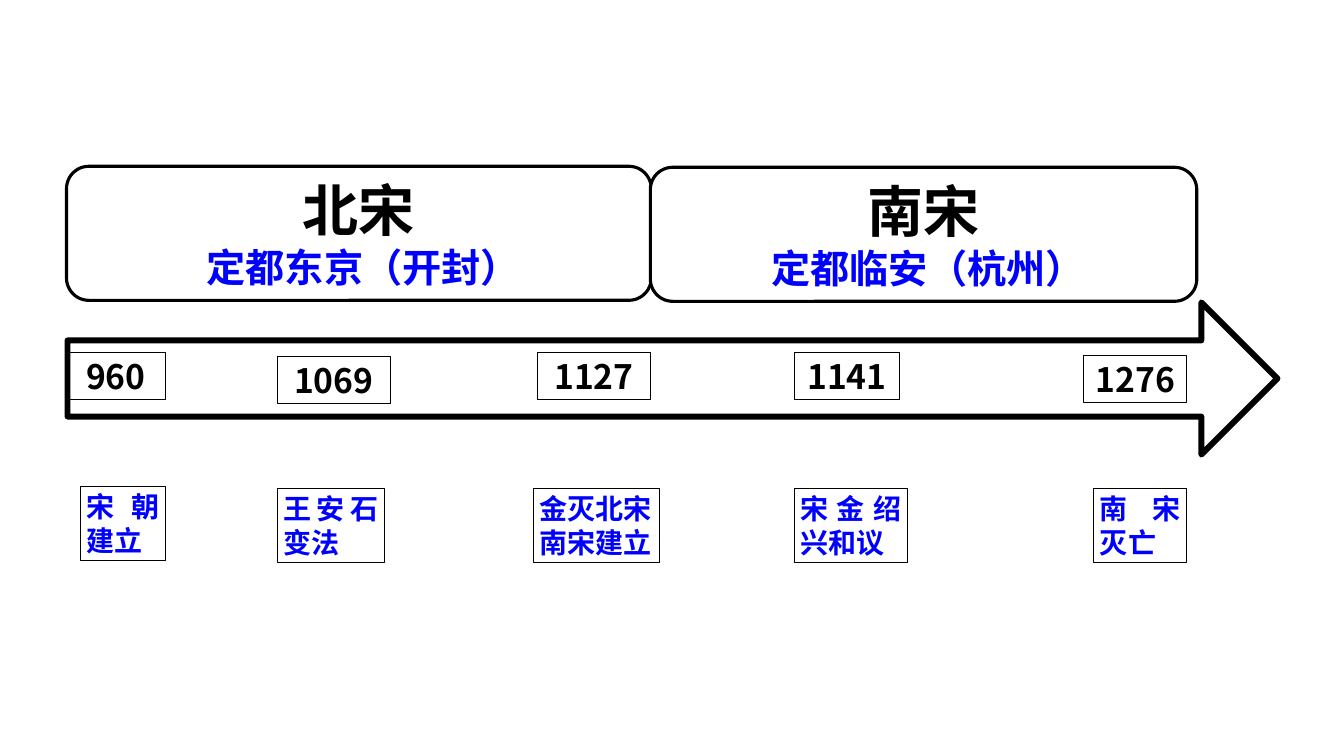
from lxml.etree import SubElement
from pptx import Presentation
from pptx.dml.color import RGBColor
from pptx.enum.shapes import MSO_SHAPE
from pptx.enum.text import MSO_ANCHOR, MSO_AUTO_SIZE, PP_ALIGN
from pptx.oxml.ns import qn
from pptx.util import Inches, Pt

BLACK = RGBColor(0, 0, 0)
WHITE = RGBColor(255, 255, 255)
BLUE = RGBColor(0, 0, 255)
FONT = "Noto Sans CJK SC"


class Timeline:
    """Holds the page and draws its dynasties, arrow, years and events."""

    def __init__(self, page):
        self.page = page

    def outline(self, kind, left, top, width, height, weight, fill=None):
        box = self.page.shapes.add_shape(
            kind, Inches(left), Inches(top), Inches(width), Inches(height))
        box.shadow.inherit = False
        if fill is None:
            box.fill.background()
        else:
            box.fill.solid()
            box.fill.fore_color.rgb = fill
        box.line.color.rgb = BLACK
        box.line.width = Pt(weight)
        return box

    def label(self, box, lines, align):
        frame = box.text_frame
        frame.word_wrap = True
        frame.auto_size = MSO_AUTO_SIZE.SHAPE_TO_FIT_TEXT
        frame.vertical_anchor = MSO_ANCHOR.TOP
        frame.margin_left = frame.margin_right = Inches(0.06)
        frame.margin_top = frame.margin_bottom = Inches(0.03)
        for index, (text, size, color) in enumerate(lines):
            para = frame.add_paragraph() if index else frame.paragraphs[0]
            para.text = text
            para.alignment = align
            font = para.font
            font.name, font.size, font.bold = FONT, Pt(size), True
            font.color.rgb = color
            # East Asian typeface, for the Chinese characters
            SubElement(font._element, qn("a:ea")).set("typeface", FONT)

    def dynasty(self, left, top, width, name, capital):
        box = self.outline(MSO_SHAPE.ROUNDED_RECTANGLE,
                           left, top, width, 1.33, 2.25, WHITE)
        self.label(box, [(name, 40, BLACK), (capital, 28, BLUE)],
                   PP_ALIGN.CENTER)

    def arrow(self, left, top, width, height):
        self.outline(MSO_SHAPE.RIGHT_ARROW,
                     left, top, width, height, 4.25, WHITE)

    def year(self, left, top, width, text):
        box = self.outline(MSO_SHAPE.RECTANGLE, left, top, width, 0.46, 0.75)
        self.label(box, [(text, 24, BLACK)], PP_ALIGN.CENTER)

    def event(self, left, top, width, text, align=PP_ALIGN.JUSTIFY):
        box = self.outline(MSO_SHAPE.RECTANGLE, left, top, width, 0.73, 0.75)
        self.label(box, [(text, 20, BLUE)], align)


def main():
    deck = Presentation()
    deck.slide_width, deck.slide_height = Inches(13.33), Inches(7.5)
    timeline = Timeline(deck.slides.add_slide(deck.slide_layouts[6]))

    # Dynasties and their capitals
    timeline.dynasty(0.66, 1.65, 5.8, "北宋", " 定都东京（开封）")
    timeline.dynasty(6.45, 1.66, 5.42, "南宋", " 定都临安（杭州）")

    # Events below the arrow
    timeline.event(0.8, 4.83, 0.84, "宋朝建立")
    timeline.event(2.75, 4.85, 1.06, "王安石变法")
    timeline.event(5.29, 4.85, 1.25, "金灭北宋南宋建立", PP_ALIGN.LEFT)
    timeline.event(7.88, 4.85, 1.12, "宋金绍兴和议")
    timeline.event(10.85, 4.85, 0.92, "南宋灭亡")

    # Time arrow with the years on it
    timeline.arrow(0.67, 3, 12, 1.51)
    timeline.year(0.66, 3.5, 0.98, "960")
    timeline.year(2.75, 3.54, 1.12, "1069")
    timeline.year(5.33, 3.5, 1.12, "1127")
    timeline.year(7.88, 3.5, 1.04, "1141")
    timeline.year(10.75, 3.53, 1.02, "1276")

    deck.save("out.pptx")


if __name__ == "__main__":
    main()
